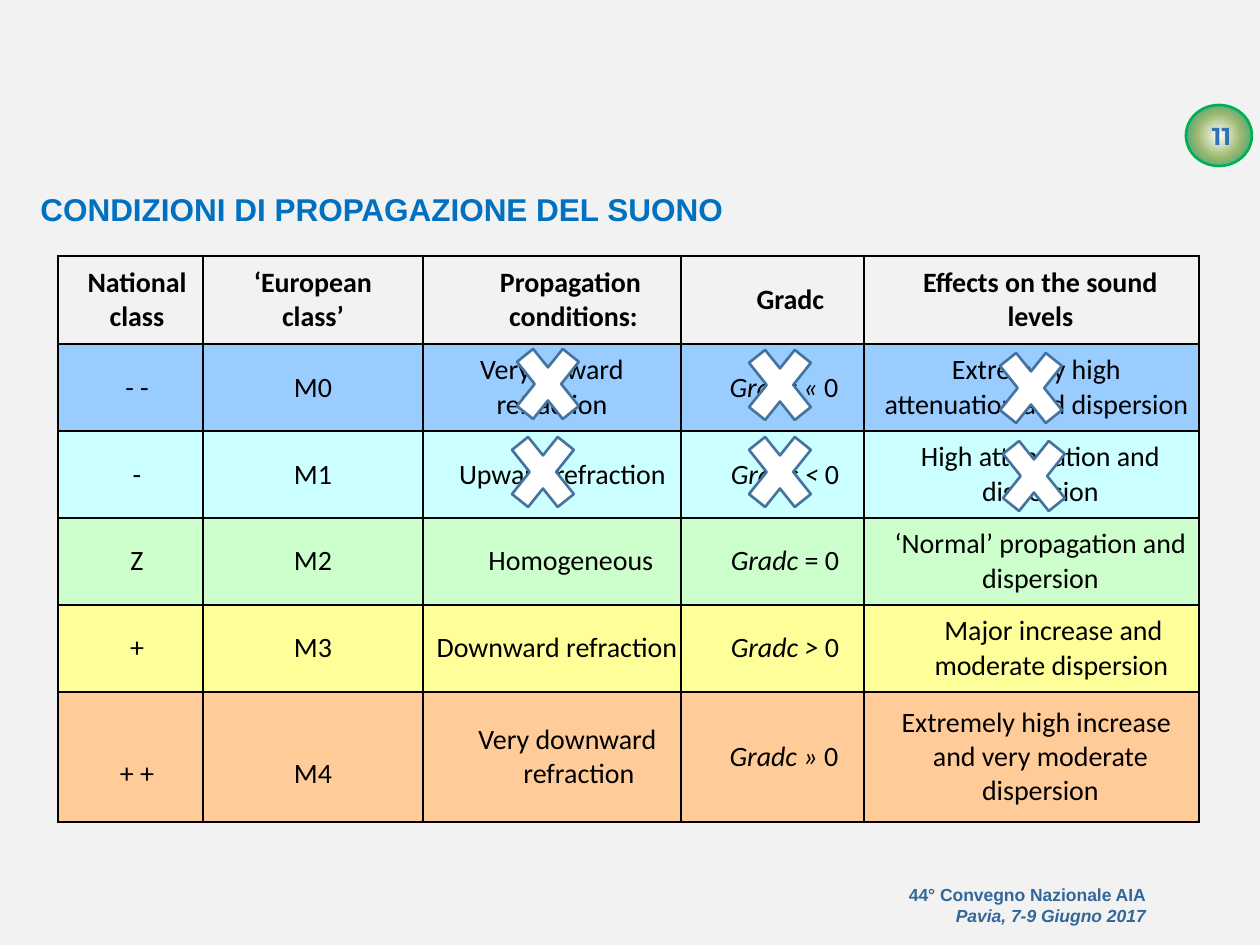
from typing import NamedTuple

from lxml import etree
from pptx import Presentation
from pptx.dml.color import RGBColor
from pptx.enum.shapes import MSO_SHAPE
from pptx.enum.text import MSO_ANCHOR, PP_ALIGN
from pptx.oxml import parse_xml
from pptx.oxml.ns import qn
from pptx.util import Emu, Pt

OVAL, CROSS = MSO_SHAPE.OVAL, MSO_SHAPE.MATH_MULTIPLY
LEFT, CENTER, RIGHT = PP_ALIGN.LEFT, PP_ALIGN.CENTER, PP_ALIGN.RIGHT
MIDDLE = MSO_ANCHOR.MIDDLE
NS = "http://schemas.openxmlformats.org/drawingml/2006/main"


class Line(NamedTuple):
    text: str
    left: int = 0
    first: int = 0
    italic: str = ""


class Row(NamedTuple):
    height: int
    fill: str
    cells: list[list[Line]]
    class_drop: int = 0


class Box(NamedTuple):
    x: int
    y: int
    w: int
    h: int


COLUMNS = [145, 220, 258, 183, 335]
ROWS = [
    Row(88, "", [
        [Line("National", 13), Line("class", 13)],
        [Line("‘European"), Line("class’")],
        [Line("Propagation", 43, -6), Line("conditions:", 43)],
        [Line("Gradc", 36)],
        [Line("Effects on the sound", 18), Line("levels", 18)]]),
    Row(87, "99CCFF", [
        [Line("- -", 13)],
        [Line("M0")],
        [Line("Very upward"), Line("refraction")],
        [Line("0", 23, italic="Gradc « ")],
        [Line("Extremely high", 10), Line("attenuation and dispersion", 10)]]),
    Row(87, "CCFFFF", [
        [Line("-", 13)],
        [Line("M1")],
        [Line("Upward refraction", 21)],
        [Line("0", 25, italic="Gradc < ")],
        [Line("High attenuation and", 18), Line("dispersion", 18)]]),
    Row(87, "CCFFCC", [
        [Line("Z", 13)],
        [Line("M2")],
        [Line("Homogeneous", 38)],
        [Line("= 0", 25, italic="Gradc ")],
        [Line("‘Normal’ propagation and", 18), Line("dispersion", 18)]]),
    Row(87, "FFFF99", [
        [Line("+", 13)],
        [Line("M3")],
        [Line("Downward refraction", 10)],
        [Line("0", 25, italic="Gradc > ")],
        [Line("Major increase and", 40, 4), Line("moderate dispersion", 40)]]),
    Row(130, "FFCC99", [
        [Line("+ +", 13)],
        [Line("M4")],
        [Line("Very downward refraction", 54, -23)],
        [Line("0", 23, italic="Gradc » ")],
        [Line("Extremely high increase", 10),
         Line("and very moderate dispersion", 18)]], class_drop=34),
]
CROSSES = [(736, 330), (504, 329), (736, 417), (499, 417), (987, 333), (990, 421)]


def px(n: int) -> Emu:
    """Turn pixels into EMU."""
    return Emu(round(n * 914400 / 126))


def rgb(value: str) -> RGBColor:
    """Turn a hex string into a colour."""
    return RGBColor.from_string(value)


def set_font(font, name: str, size: int, color: str, bold: bool) -> None:
    """Set the face, size, colour and weight of a font."""
    font.name, font.size, font.bold = name, Pt(size), bold
    font.color.rgb = rgb(color)


def add_shape(s, kind, box: Box, fill: str, line: str):
    """Add an outlined preset shape without shadow."""
    sp = s.shapes.add_shape(kind, *map(px, box))
    sp.shadow.inherit = False
    sp.fill.solid()
    sp.fill.fore_color.rgb = rgb(fill)
    sp.line.color.rgb = rgb(line)
    sp.line.width = Pt(1.5)
    return sp


def add_badge(s, box: Box) -> None:
    """Add the round badge with its radial gradient."""
    sp = add_shape(s, OVAL, box, "FFFFFF", "00B050")
    stops = "".join(
        f'<a:gs pos="{pos}"><a:srgbClr val="{color}"/></a:gs>'
        for pos, color in [(0, "FFFFFF"), (50000, "9CB86E"), (100000, "009999")])
    gradient = parse_xml(
        f'<a:gradFill xmlns:a="{NS}" rotWithShape="1"><a:gsLst>{stops}</a:gsLst>'
        '<a:path path="circle"><a:fillToRect l="50000" t="50000" r="50000" b="50000"/>'
        '</a:path></a:gradFill>')
    spPr = sp._element.spPr
    spPr.replace(spPr.find(qn("a:solidFill")), gradient)


def add_text(s, box: Box, text: str, name: str, size: int, color: str,
             align, wrap: bool = True):
    """Add a bold one-paragraph text box and return the paragraph."""
    tf = s.shapes.add_textbox(*map(px, box)).text_frame
    tf.word_wrap = wrap
    p = tf.paragraphs[0]
    p.alignment = align
    p.add_run().text = text
    set_font(p.font, name, size, color, True)
    return p


def add_borders(cell) -> None:
    """Give a cell thin black borders on all sides."""
    tcPr = cell._tc.get_or_add_tcPr()
    for i, side in enumerate(("lnL", "lnR", "lnT", "lnB")):
        ln = etree.Element(qn(f"a:{side}"), w=str(Pt(1)))
        fill = etree.SubElement(ln, qn("a:solidFill"))
        etree.SubElement(fill, qn("a:srgbClr"), val="000000")
        tcPr.insert(i, ln)


def fill_cell(cell, lines: list[Line], fill: str, drop: int) -> None:
    """Write and format one table cell."""
    cell.margin_left = cell.margin_right = cell.margin_bottom = 0
    cell.margin_top = px(drop)
    cell.vertical_anchor = MIDDLE
    if fill:
        cell.fill.solid()
        cell.fill.fore_color.rgb = rgb(fill)
    else:
        cell.fill.background()
    add_borders(cell)
    tf = cell.text_frame
    for i, line in enumerate(lines):
        p = tf.add_paragraph() if i else tf.paragraphs[0]
        p.alignment = CENTER
        pPr = p._p.get_or_add_pPr()
        pPr.set("marL", str(px(line.left)))
        pPr.set("indent", str(px(line.first)))
        if line.italic:
            r = p.add_run()
            r.text = line.italic
            r.font.italic = True
        p.add_run().text = line.text
        set_font(p.font, "Calibri", 16, "000000", not fill)


def add_class_table(s, x: int, y: int) -> None:
    """Add the table of propagation classes."""
    height = sum(row.height for row in ROWS)
    box = Box(x, y, sum(COLUMNS), height)
    table = s.shapes.add_table(len(ROWS), len(COLUMNS), *map(px, box)).table
    table.first_row = table.horz_banding = False
    for column, width in zip(table.columns, COLUMNS):
        column.width = px(width)
    for i, row in enumerate(ROWS):
        table.rows[i].height = px(row.height)
        for j, lines in enumerate(row.cells):
            drop = row.class_drop if j < 2 else 0
            fill_cell(table.cell(i, j), lines, row.fill, drop)


def main() -> None:
    """Build the slide and save it."""
    prs = Presentation()
    prs.slide_width, prs.slide_height = px(1260), px(945)
    s = prs.slides.add_slide(prs.slide_layouts[6])
    s.background.fill.solid()
    s.background.fill.fore_color.rgb = rgb("F2F2F2")
    add_badge(s, Box(1186, 105, 66, 61))
    add_text(s, Box(1188, 115, 67, 72), "11", "Montserrat", 14, "2E75B6", CENTER)
    p = add_text(s, Box(698, 878, 460, 55), "44° Convegno Nazionale AIA",
                 "Arial", 10, "336699", RIGHT)
    p.add_line_break()
    r = p.add_run()
    r.text = "Pavia, 7-9 Giugno 2017"
    r.font.italic = True
    add_text(s, Box(28, 184, 716, 50), "CONDIZIONI DI PROPAGAZIONE DEL SUONO",
             "Arial", 18, "0070C0", LEFT, wrap=False)
    add_class_table(s, 58, 256)
    for x, y in CROSSES:
        add_shape(s, CROSS, Box(x, y, 88, 110), "FFFFFF", "43739E")
    prs.save("out.pptx")


if __name__ == "__main__":
    main()
